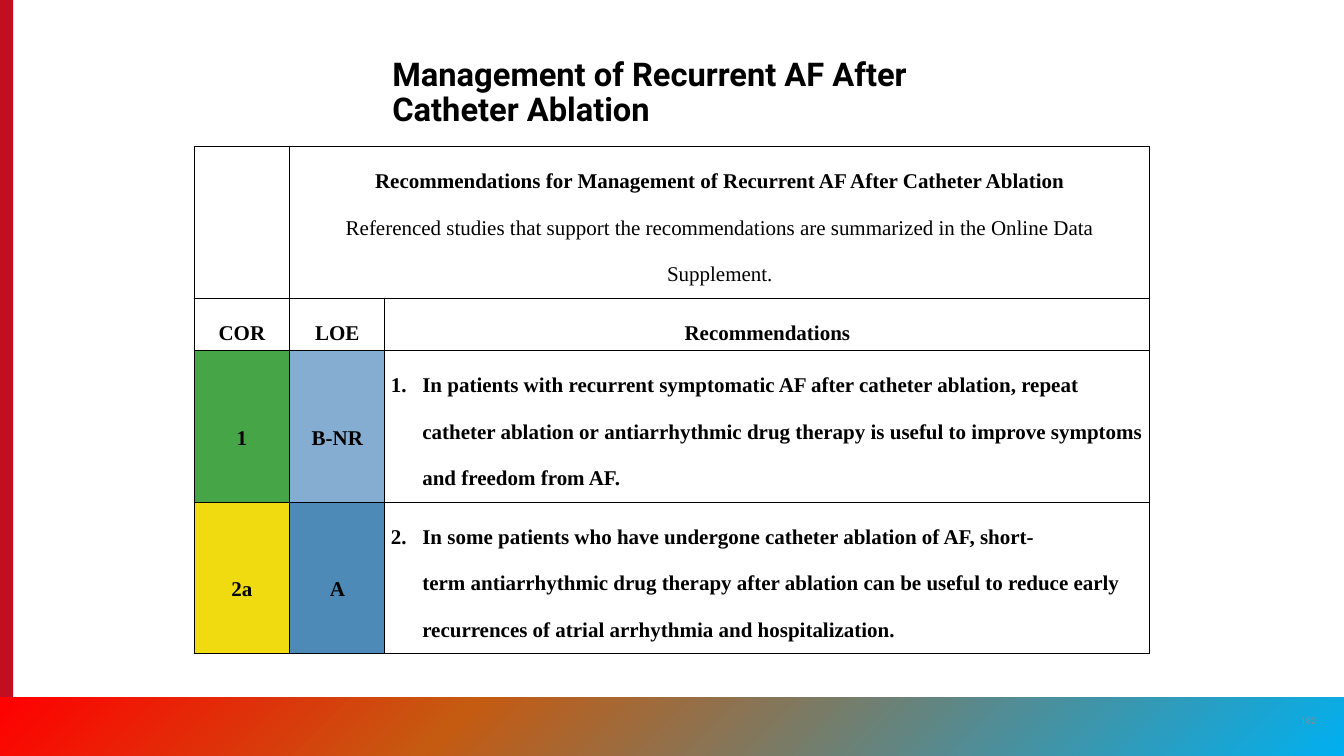
from lxml.etree import SubElement
from copy import deepcopy
from pptx import Presentation
from pptx.dml.color import RGBColor
from pptx.enum.shapes import MSO_SHAPE
from pptx.enum.text import MSO_ANCHOR, MSO_AUTO_SIZE, PP_ALIGN
from pptx.oxml.ns import qn
from pptx.util import Cm, Pt

BLACK = RGBColor(0x00, 0x00, 0x00)
GRAY = RGBColor(0x8A, 0x8B, 0x8A)
CRIMSON = RGBColor(0xC1, 0x0E, 0x21)
SKY = RGBColor(0x00, 0xB0, 0xF0)
RUST = RGBColor(0xC5, 0x5A, 0x11)
RED = RGBColor(0xFF, 0x00, 0x00)
GREEN = RGBColor(0x45, 0xA5, 0x47)
YELLOW = RGBColor(0xF0, 0xDA, 0x10)
LIGHT_BLUE = RGBColor(0x85, 0xAD, 0xD1)
MID_BLUE = RGBColor(0x4E, 0x8A, 0xB7)

NBSP = chr(160)
HEADING = "Recommendations for Management of Recurrent AF After Catheter Ablation"
REFERENCE = ("Referenced studies that support the recommendations are "
             "summarized in the Online Data Supplement.")
RECOMMENDATIONS = [
    ("1", GREEN, "B-NR", LIGHT_BLUE,
     "In patients with recurrent symptomatic AF after catheter ablation, repeat "
     f"catheter ablation or{NBSP}antiarrhythmic drug{NBSP}therapy is useful to "
     "improve symptoms and freedom from AF."),
    ("2a", YELLOW, "A", MID_BLUE,
     "In some patients who have undergone catheter ablation of AF, "
     f"short-term{NBSP}antiarrhythmic drug{NBSP}therapy after ablation can be "
     "useful to reduce early recurrences of atrial arrhythmia and hospitalization."),
]


class GuidelineSlide:
    """Holds the style and the current slide, and adds its elements."""

    title_font = "Roboto"
    table_font = "Times New Roman"

    def __init__(self, deck):
        self.slide = deck.slides.add_slide(deck.slide_layouts[5])

    def set_font(self, font, name, size, color, bold=False):
        font.name, font.size, font.bold = name, Pt(size), bold
        font.color.rgb = color

    def title(self, text, left, top, width, height):
        title = self.slide.shapes.title
        title.left, title.top = Cm(left), Cm(top)
        title.width, title.height = Cm(width), Cm(height)
        frame = title.text_frame
        frame.text = text
        frame.word_wrap = True
        frame.auto_size = MSO_AUTO_SIZE.NONE
        frame.vertical_anchor = MSO_ANCHOR.BOTTOM
        paragraph = frame.paragraphs[0]
        paragraph.alignment = PP_ALIGN.LEFT
        paragraph.line_spacing = 0.9
        self.set_font(paragraph.font, self.title_font, 28, BLACK, True)

    def bar(self, left, top, width, height):
        bar = self.slide.shapes.add_shape(
            MSO_SHAPE.RECTANGLE, Cm(left), Cm(top), Cm(width), Cm(height))
        bar.shadow.inherit = False
        bar.line.fill.background()
        return bar

    def solid_bar(self, color, *place):
        fill = self.bar(*place).fill
        fill.solid()
        fill.fore_color.rgb = color

    def gradient_bar(self, stops, *place):
        bar = self.bar(*place)
        bar.rotation = 180
        bar.fill.gradient()
        bar.fill.gradient_angle = 315
        stop_list = bar._element.spPr.find(".//" + qn("a:gsLst"))
        stop_list.insert(1, deepcopy(stop_list[0]))
        for stop, (position, color) in zip(bar.fill.gradient_stops, stops):
            stop.position = position
            stop.color.rgb = color

    def page_number(self, text, left, top, side):
        number = self.slide.shapes.add_textbox(Cm(left), Cm(top), Cm(side), Cm(side))
        frame = number.text_frame
        frame.word_wrap = True
        frame.vertical_anchor = MSO_ANCHOR.MIDDLE
        frame.text = text
        frame.paragraphs[0].alignment = PP_ALIGN.CENTER
        self.set_font(frame.paragraphs[0].font, self.title_font, 8, GRAY)

    def table(self, left, top, widths, heights):
        table = self.slide.shapes.add_table(
            len(heights), len(widths), Cm(left), Cm(top),
            Cm(sum(widths)), Cm(sum(heights))).table
        for column, width in zip(table.columns, widths):
            column.width = Cm(width)
        for row, height in zip(table.rows, heights):
            row.height = Cm(height)
        for cell in table.iter_cells():
            self.cell(cell)
        return table

    def cell(self, cell):
        cell.margin_left = cell.margin_right = Cm(0.18)
        cell.margin_top = cell.margin_bottom = 0
        properties = cell._tc.get_or_add_tcPr()
        for side in ("a:lnL", "a:lnR", "a:lnT", "a:lnB"):
            border = SubElement(properties, qn(side), w=str(Pt(1)))
            fill = SubElement(border, qn("a:solidFill"))
            SubElement(fill, qn("a:srgbClr"), val=str(BLACK))
        cell.fill.background()

    def cell_text(self, cell, *lines, number=None):
        cell.text = "\n".join(lines)
        for index, paragraph in enumerate(cell.text_frame.paragraphs):
            paragraph.line_spacing = 2
            if number:
                properties = paragraph._p.get_or_add_pPr()
                properties.set("marL", str(Cm(0.95)))
                properties.set("indent", str(Cm(-0.95)))
                SubElement(properties, qn("a:buFont"), typeface="+mj-lt")
                SubElement(properties, qn("a:buAutoNum"),
                           type="arabicPeriod", startAt=str(number))
            else:
                paragraph.alignment = PP_ALIGN.CENTER
            run = paragraph.runs[0]
            self.set_font(run.font, self.table_font, 18, BLACK, index == 0)
            ending = SubElement(paragraph._p, qn("a:endParaRPr"), sz="1800")
            ending.extend(deepcopy(list(run._r.rPr)))

    def grade(self, cell, text, color):
        cell.fill.solid()
        cell.fill.fore_color.rgb = color
        cell.vertical_anchor = MSO_ANCHOR.MIDDLE
        self.cell_text(cell, text)


def main():
    deck = Presentation()
    deck.slide_width, deck.slide_height = Cm(40.64), Cm(22.86)
    page = GuidelineSlide(deck)
    page.solid_bar(CRIMSON, 0, 0, 0.4, 22.86)
    page.gradient_bar([(0, SKY), (0.66, RUST), (1, RED)], 0, 21.08, 40.64, 1.78)
    page.page_number("182", 38.96, 21.18, 1.22)
    page.title("Management of Recurrent AF After Catheter Ablation",
               11.61, 1.7, 17.42, 2.31)

    table = page.table(5.87, 4.44, [2.89, 2.88, 23.13], [3.48, 1.6, 3.48, 4.57])
    table.cell(0, 1).merge(table.cell(0, 2))
    page.cell_text(table.cell(0, 1), HEADING, REFERENCE)
    for column, label in enumerate(["COR", "LOE", "Recommendations"]):
        page.cell_text(table.cell(1, column), label)
    for number, (cor, cor_color, loe, loe_color, advice) in enumerate(RECOMMENDATIONS, 1):
        row = number + 1
        page.grade(table.cell(row, 0), cor, cor_color)
        page.grade(table.cell(row, 1), loe, loe_color)
        page.cell_text(table.cell(row, 2), advice, number=number)
    deck.save("out.pptx")


if __name__ == "__main__":
    main()
